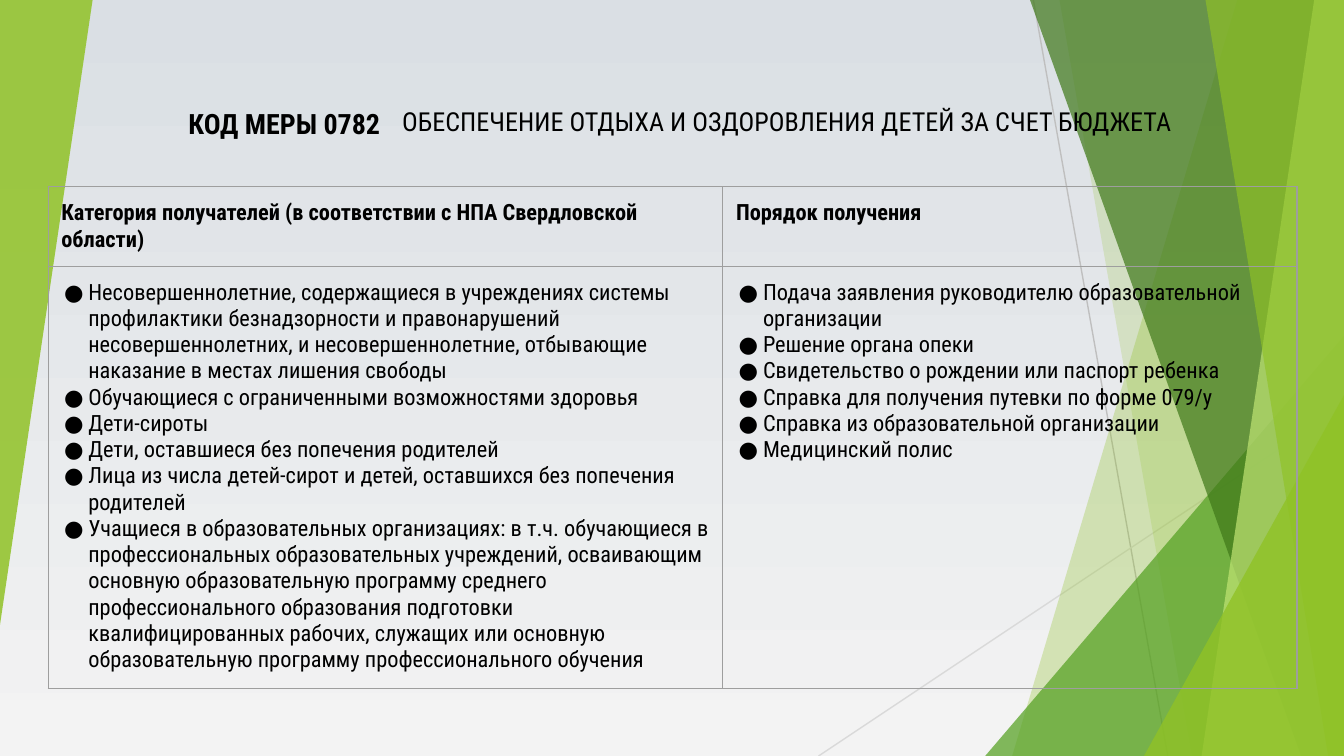
from dataclasses import dataclass

from pptx import Presentation
from pptx.dml.color import RGBColor
from pptx.enum.shapes import MSO_CONNECTOR, MSO_SHAPE
from pptx.enum.text import MSO_ANCHOR, MSO_AUTO_SIZE, PP_ALIGN
from pptx.oxml.ns import qn
from pptx.util import Cm, Pt
from lxml.etree import SubElement

COLORS = {
    "text": "000000", "border": "9E9E9E", "sky": "DADFE4", "ground": "F3F3F3",
    "grey": "BFBFBF", "pale": "D9D9D9", "lime": "90C226", "leaf": "54A021",
    "dark": "3F7819", "light": "C0E474",
}
FONT = "Roboto Condensed"
WIDTH, HEIGHT = 25.4, 14.29
BODY_ROWS = 6

HEADS = ["Категория получателей (в соответствии с НПА Свердловской области)",
         "Порядок получения"]
LISTS = [
    [
        "Несовершеннолетние, содержащиеся в учреждениях системы профилактики "
        "безнадзорности и правонарушений несовершеннолетних, и несовершеннолетние, "
        "отбывающие наказание в местах лишения свободы",
        "Обучающиеся с ограниченными возможностями здоровья",
        "Дети-сироты",
        "Дети, оставшиеся без попечения родителей",
        "Лица из числа детей-сирот и детей, оставшихся без попечения родителей",
        "Учащиеся в образовательных организациях: в т.ч. обучающиеся в "
        "профессиональных образовательных учреждений, осваивающим основную "
        "образовательную программу среднего профессионального образования "
        "подготовки квалифицированных рабочих, служащих или основную "
        "образовательную программу профессионального обучения",
    ],
    [
        "Подача заявления руководителю образовательной организации",
        "Решение органа опеки",
        "Свидетельство о рождении или паспорт ребенка",
        "Справка для получения путевки по форме 079/у",
        "Справка из образовательной организации",
        "Медицинский полис",
    ],
]


@dataclass
class Ray:
    start: tuple[float, float]
    end: tuple[float, float]
    color: str


@dataclass
class Band:
    """A strip from a slanted left edge to the right side of the slide."""
    top: float
    bottom: float
    color: str
    alpha: int


@dataclass
class Wedge:
    left: float
    top: float
    width: float
    height: float
    color: str
    alpha: int
    turn: int = 0


RAYS = [
    Ray((19.53, 0), (22.07, HEIGHT), "grey"),
    Ray((WIDTH, 7.67), (15.47, HEIGHT), "pale"),
]
DECOR = [
    Band(23.39, 19.13, "lime", 30),
    Band(20.02, 22.53, "lime", 20),
    Wedge(18.62, 6.35, 6.78, 7.94, "leaf", 72),
    Band(19.46, 24.59, "dark", 70),
    Band(24.84, 22.71, "light", 70),
    Band(22.78, 25.1, "lime", 65),
    Wedge(21.62, 7.47, 3.78, 6.82, "lime", 80),
    Wedge(0, 0, 1.75, 11.81, "lime", 85, turn=180),
]


def rgb(name: str) -> RGBColor:
    return RGBColor.from_string(COLORS[name])


def write(frame, *lines: str, size: int, bold: bool = False, align=PP_ALIGN.LEFT,
          space: float | None = None, bullet: bool = False) -> None:
    for i, line in enumerate(lines):
        para = frame.add_paragraph() if i else frame.paragraphs[0]
        para.alignment = align
        if space:
            para.line_spacing = space
        if bullet:
            add_bullet(para)
        run = para.add_run()
        run.text = line
        run.font.name, run.font.size, run.font.bold = FONT, Pt(size), bold
        run.font.color.rgb = rgb("text")


def add_bullet(para) -> None:
    props = para._p.get_or_add_pPr()
    props.set("marL", str(Cm(0.51)))
    props.set("indent", str(Cm(-0.46)))
    tint = SubElement(props, qn("a:buClr"))
    SubElement(tint, qn("a:srgbClr"), val=COLORS["text"])
    SubElement(props, qn("a:buFont"), typeface=FONT)
    SubElement(props, qn("a:buChar"), char="●")


def add_ray(slide, ray: Ray) -> None:
    ends = [Cm(v) for v in ray.start + ray.end]
    line = slide.shapes.add_connector(MSO_CONNECTOR.STRAIGHT, *ends)
    line.line.color.rgb = rgb(ray.color)
    line.line.width = Pt(0.75)
    SubElement(line._element.spPr, qn("a:effectLst"))


def add_decor(slide, item: Band | Wedge) -> None:
    if isinstance(item, Band):
        path = slide.shapes.build_freeform(Cm(item.top), Cm(-0.02))
        path.add_line_segments([(Cm(WIDTH), Cm(-0.02)), (Cm(WIDTH), Cm(HEIGHT)),
                                (Cm(item.bottom), Cm(HEIGHT))])
        shape = path.convert_to_shape()
    else:
        box = [Cm(v) for v in (item.left, item.top, item.width, item.height)]
        shape = slide.shapes.add_shape(MSO_SHAPE.ISOSCELES_TRIANGLE, *box)
        shape.adjustments[0] = 1
        shape.rotation = item.turn
    shape.shadow.inherit = False
    shape.line.fill.background()
    shape.fill.solid()
    shape.fill.fore_color.rgb = rgb(item.color)
    tint = shape._element.spPr.find(f".//{qn('a:srgbClr')}")
    SubElement(tint, qn("a:alpha"), val=str(item.alpha * 1000))


def set_frame(frame, side: float, edge: float) -> None:
    frame.word_wrap = True
    frame.auto_size = MSO_AUTO_SIZE.NONE
    frame.vertical_anchor = MSO_ANCHOR.MIDDLE
    frame.margin_left = frame.margin_right = Cm(side)
    frame.margin_top = frame.margin_bottom = Cm(edge)


def style_cell(cell) -> None:
    cell.margin_left = cell.margin_right = Cm(0.25)
    cell.margin_top = cell.margin_bottom = Cm(0.25)
    props = cell._tc.get_or_add_tcPr()
    for side in "LRTB":
        line = SubElement(props, qn(f"a:ln{side}"), w=str(Pt(0.75)))
        fill = SubElement(line, qn("a:solidFill"))
        SubElement(fill, qn("a:srgbClr"), val=COLORS["border"])
    cell.fill.background()


def add_grid(slide) -> None:
    grid = slide.shapes.add_table(BODY_ROWS + 1, 2, Cm(0.91), Cm(3.53),
                                  Cm(23.6), Cm(9.48)).table
    grid.first_row = grid.horz_banding = False
    for col, width in zip(grid.columns, (12.75, 10.85)):
        col.width = Cm(width)
    for i, row in enumerate(grid.rows):
        row.height = Cm(1.33 if i else 1.5)
    for cell in grid.iter_cells():
        style_cell(cell)
    for i, (head, items) in enumerate(zip(HEADS, LISTS)):
        write(grid.cell(0, i).text_frame, head, size=12, bold=True)
        grid.cell(1, i).merge(grid.cell(BODY_ROWS, i))
        write(grid.cell(1, i).text_frame, *items, size=12, bullet=True)


def main() -> None:
    deck = Presentation()
    deck.slide_width, deck.slide_height = Cm(WIDTH), Cm(HEIGHT)
    slide = deck.slides.add_slide(deck.slide_layouts[0])
    back = slide.background.fill
    back.gradient()
    back.gradient_angle = 270
    for stop, name, place in zip(back.gradient_stops, ("sky", "ground"), (0, 1)):
        stop.color.rgb = rgb(name)
        stop.position = place

    sub = slide.placeholders[1]._element
    sub.getparent().remove(sub)
    for ray in RAYS:
        add_ray(slide, ray)
    for item in DECOR:
        add_decor(slide, item)

    code = slide.shapes.add_textbox(Cm(2.08), Cm(1.35), Cm(5.36), Cm(1.96))
    set_frame(code.text_frame, 0.25, 0.25)
    write(code.text_frame, "КОД МЕРЫ 0782", size=15, bold=True, align=PP_ALIGN.RIGHT)
    add_grid(slide)

    title = slide.shapes.title
    title.left, title.top, title.width, title.height = Cm(7.42), Cm(1.35), Cm(16), Cm(1.96)
    set_frame(title.text_frame, 0.18, 0.1)
    write(title.text_frame, "ОБЕСПЕЧЕНИЕ ОТДЫХА И ОЗДОРОВЛЕНИЯ ДЕТЕЙ ЗА СЧЕТ БЮДЖЕТА",
          size=14, space=0.9)
    slide.shapes._spTree.append(title._element)  # in front of the bands
    deck.save("out.pptx")


if __name__ == "__main__":
    main()
